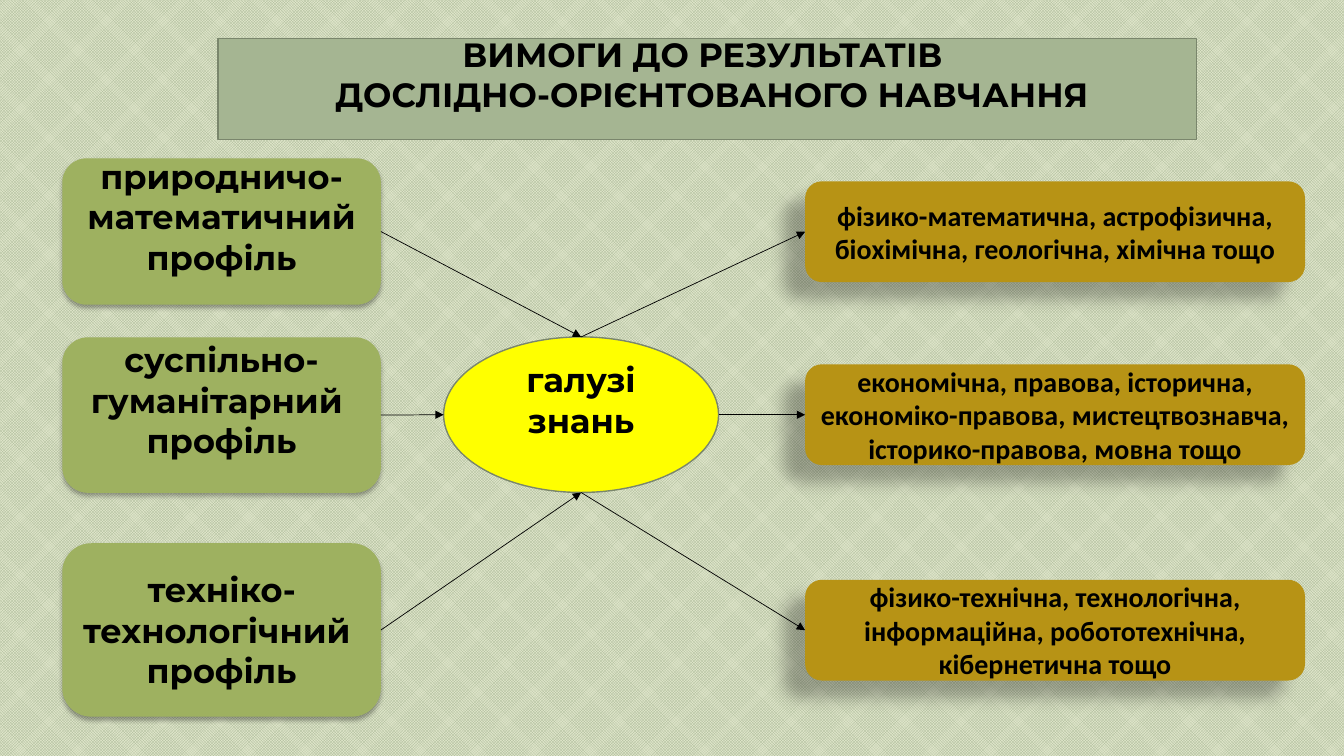
from dataclasses import dataclass

from lxml.etree import SubElement
from pptx import Presentation
from pptx.dml.color import RGBColor
from pptx.enum.dml import MSO_PATTERN
from pptx.enum.shapes import MSO_CONNECTOR as Link, MSO_SHAPE as Preset
from pptx.enum.text import MSO_ANCHOR, MSO_AUTO_SIZE, PP_ALIGN
from pptx.oxml.ns import qn
from pptx.util import Cm, Length, Pt

Point = tuple[Length, Length]
TITLE_ONLY = 5
TOP, LEFT, RIGHT = 0, 1, 3


@dataclass(frozen=True)
class Shadow:
    opacity: int
    blur: float
    distance: float
    angle: int


@dataclass(frozen=True)
class Theme:
    sage: str = "A5B592"
    pale: str = "DFE5CA"
    outline: str = "7A866C"
    green: str = "9EB160"
    gold: str = "B79315"
    yellow: str = "FFFF00"
    ink: str = "000000"
    heading_font: str = "Montserrat"
    body_font: str = "Calibri"
    heading_size: int = 24
    body_size: int = 20
    outline_width: float = 1
    arrow_width: float = 0.5
    profile_shadow: Shadow = Shadow(32, 3.5, 2.2, 90)
    field_shadow: Shadow = Shadow(28, 11.8, 19.7, 141)


THEME = Theme()


@dataclass(frozen=True)
class Box:
    """A filled shape with text; lift is extra bottom inset, all lengths in cm."""
    left: float
    top: float
    width: float
    height: float
    fill: str
    lines: tuple[str, ...]
    font: str = THEME.heading_font
    size: int = THEME.heading_size
    lift: float = 0
    preset: Preset = Preset.ROUNDED_RECTANGLE
    shadow: Shadow | None = None


def profile(top: float, height: float, lift: float, *lines: str) -> Box:
    return Box(1.57, top, 8.03, height, THEME.green, lines, lift=lift,
               shadow=THEME.profile_shadow)


def field(top: float, *lines: str) -> Box:
    return Box(20.29, top, 12.6, 2.54, THEME.gold, lines, THEME.body_font,
               THEME.body_size, shadow=THEME.field_shadow)


LIFT = 0.76
HEADING = Box(5.49, 0.97, 24.66, 2.54, THEME.sage,
              ("ВИМОГИ ДО РЕЗУЛЬТАТІВ ", " ДОСЛІДНО-ОРІЄНТОВАНОГО НАВЧАННЯ"),
              lift=LIFT)
HUB = Box(11.18, 8.49, 6.93, 3.92, THEME.yellow, ("галузі знань",),
          lift=LIFT, preset=Preset.OVAL)
PROFILES = (
    profile(3.99, 3.69, LIFT, "природничо-математичний профіль"),
    profile(8.5, 3.92, LIFT, "суспільно-гуманітарний ", "профіль"),
    profile(13.69, 4.37, 0, "техніко-технологічний ", "профіль"),
)
FIELDS = (
    field(4.57, "фізико-математична, астрофізична, біохімічна, геологічна, хімічна тощо"),
    field(9.18, "економічна, правова, історична, економіко-правова, мистецтвознавча,",
          "історико-правова, мовна тощо"),
    field(14.61, "фізико-технічна, технологічна, інформаційна, робототехнічна, "
                 "кібернетична тощо"),
)


def rgb(colour: str) -> RGBColor:
    return RGBColor.from_string(colour)


def add_shadow(shape, shadow: Shadow) -> None:
    effects = shape._element.spPr.find(qn("a:effectLst"))
    outer = SubElement(effects, qn("a:outerShdw"), {
        "blurRad": str(Pt(shadow.blur)), "dist": str(Pt(shadow.distance)),
        "dir": str(shadow.angle * 60000), "algn": "ctr", "rotWithShape": "0"})
    colour = SubElement(outer, qn("a:srgbClr"), val=THEME.ink)
    SubElement(colour, qn("a:alpha"), val=str(shadow.opacity * 1000))


def write_text(shape, box: Box) -> None:
    frame = shape.text_frame
    frame.word_wrap = True
    frame.auto_size = MSO_AUTO_SIZE.NONE
    frame.vertical_anchor = MSO_ANCHOR.MIDDLE
    frame.margin_bottom = Cm(0.13 + box.lift)
    for number, line in enumerate(box.lines):
        paragraph = frame.add_paragraph() if number else frame.paragraphs[0]
        paragraph.alignment = PP_ALIGN.CENTER
        run = paragraph.add_run()
        run.text = line
        run.font.name = box.font
        run.font.size = Pt(box.size)
        run.font.bold = True
        run.font.color.rgb = rgb(THEME.ink)


def dress(shape, box: Box) -> None:
    """Give a placed shape its fill, outline or shadow, and text."""
    shape.fill.solid()
    shape.fill.fore_color.rgb = rgb(box.fill)
    if box.shadow:
        shape.line.fill.background()
    else:
        shape.line.color.rgb = rgb(THEME.outline)
        shape.line.width = Pt(THEME.outline_width)
    write_text(shape, box)


def add_box(slide, box: Box):
    shape = slide.shapes.add_shape(box.preset, Cm(box.left), Cm(box.top),
                                   Cm(box.width), Cm(box.height))
    shape.shadow.inherit = False
    dress(shape, box)
    if box.shadow:
        add_shadow(shape, box.shadow)
    return shape


def fill_title(slide, box: Box) -> None:
    title = slide.shapes.title
    title.left, title.top = Cm(box.left), Cm(box.top)
    title.width, title.height = Cm(box.width), Cm(box.height)
    geometry = SubElement(title._element.spPr, qn("a:prstGeom"), prst="roundRect")
    SubElement(geometry, qn("a:avLst"))
    dress(title, box)


def side_middle(shape, side: int) -> Point:
    centre_x, centre_y = shape.left + shape.width // 2, shape.top + shape.height // 2
    return ((centre_x, shape.top), (shape.left, centre_y),
            (centre_x, shape.top + shape.height),
            (shape.left + shape.width, centre_y))[side]


def add_arrow(slide, start: Point, end: Point):
    arrow = slide.shapes.add_connector(Link.STRAIGHT, *start, *end)
    arrow.line.color.rgb = rgb(THEME.ink)
    arrow.line.width = Pt(THEME.arrow_width)
    SubElement(arrow.line._get_or_add_ln(), qn("a:tailEnd"), type="triangle")
    SubElement(arrow._element.spPr, qn("a:effectLst"))
    return arrow


def main() -> None:
    deck = Presentation()
    deck.slide_width, deck.slide_height = Cm(33.87), Cm(19.05)
    slide = deck.slides.add_slide(deck.slide_layouts[TITLE_ONLY])

    backdrop = slide.background.fill
    backdrop.patterned()
    backdrop.pattern = MSO_PATTERN.SMALL_CHECKER_BOARD
    backdrop.fore_color.rgb = rgb(THEME.sage)
    backdrop.back_color.rgb = rgb(THEME.pale)

    fill_title(slide, HEADING)
    profiles = [add_box(slide, box) for box in PROFILES]
    hub = add_box(slide, HUB)
    fields = [add_box(slide, box) for box in FIELDS]

    top, left, bottom, right = (side_middle(hub, side) for side in range(4))
    hub_ends = ((top, top), (left, right), (bottom, bottom))
    for source, target, (entry, leave) in zip(profiles, fields, hub_ends):
        inward = add_arrow(slide, side_middle(source, RIGHT), entry)
        inward.begin_connect(source, RIGHT)
        outward = add_arrow(slide, leave, side_middle(target, LEFT))
        outward.end_connect(target, LEFT)

    deck.save("out.pptx")


if __name__ == "__main__":
    main()
